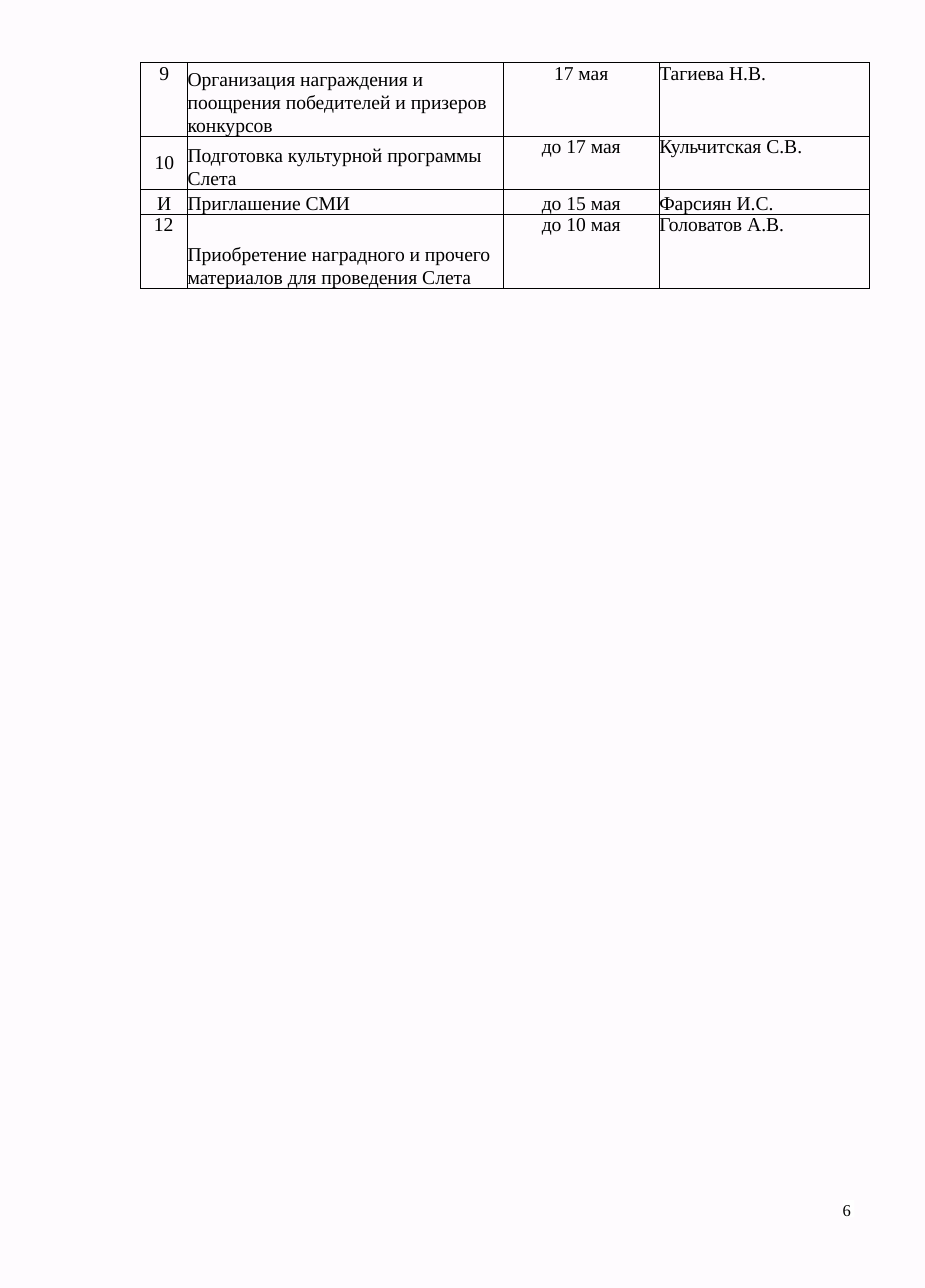
from pptx import Presentation
from pptx.dml.color import RGBColor
from pptx.enum.text import MSO_ANCHOR as Anchor, PP_ALIGN as Align
from pptx.oxml import parse_xml
from pptx.oxml.ns import nsdecls
from pptx.util import Inches, Pt

COLORS = {"page": "FEFBFE", "number": "FFFFFF", "ink": "000000"}
COLUMN_WIDTHS = [0.43, 2.91, 1.44, 1.94]
ROW_HEIGHTS = [0.68, 0.49, 0.23, 0.68]
TASKS = [
    ["9", "Организация награждения и поощрения победителей и призеров конкурсов", "17 мая", "Тагиева Н.В."],
    ["10", "Подготовка культурной программы Слета", "до 17 мая", "Кульчитская С.В."],
    ["И", "Приглашение СМИ", "до 15 мая", "Фарсиян И.С."],
    ["12", "Приобретение наградного и прочего материалов для проведения Слета", "до 10 мая", "Головатов А.В."],
]
COLUMN_ALIGNS = [Align.CENTER, Align.LEFT, Align.CENTER, Align.LEFT]
TOP, MIDDLE, BOTTOM = Anchor.TOP, Anchor.MIDDLE, Anchor.BOTTOM
ROW_ANCHORS = [
    [TOP, BOTTOM, TOP, TOP],
    [MIDDLE, BOTTOM, TOP, TOP],
    [BOTTOM] * 4,
    [TOP, BOTTOM, TOP, TOP],
]
TASK_SPACING = [1.07, 1.08, 1.0, 1.06]
NO_MARGINS = dict.fromkeys(["margin_left", "margin_top", "margin_right", "margin_bottom"], 0)


def apply(target, values):
    for name, value in values.items():
        setattr(target, name, value)


class Page:
    font = "Times New Roman"
    border = Pt(0.75)

    def __init__(self, deck):
        self.slide = deck.slides.add_slide(deck.slide_layouts[6])
        self.paint(self.slide.background.fill, "page")

    def paint(self, fill, color):
        fill.solid()
        fill.fore_color.rgb = RGBColor.from_string(COLORS[color])

    def add_text(self, para, text, size, **layout):
        apply(para, layout)
        span = para.add_run()
        span.text = text
        apply(span.font, {"name": self.font, "size": Pt(size)})
        span.font.color.rgb = RGBColor.from_string(COLORS["ink"])

    def outline(self, cell):
        properties = cell._tc.get_or_add_tcPr()
        for index, side in enumerate("LRTB"):
            properties.insert(index, parse_xml(
                f'<a:ln{side} {nsdecls("a")} w="{self.border}"><a:solidFill>'
                f'<a:srgbClr val="{COLORS["ink"]}"/></a:solidFill></a:ln{side}>'))

    def table(self, left, top, widths, heights):
        frame = self.slide.shapes.add_table(
            len(heights), len(widths), Inches(left), Inches(top),
            Inches(sum(widths)), Inches(sum(heights)))
        table = frame.table
        apply(table, {"first_row": False, "horz_banding": False})
        for column, width in zip(table.columns, widths):
            column.width = Inches(width)
        for row, height in zip(table.rows, heights):
            row.height = Inches(height)
        return table

    def cell(self, cell, text, anchor, **layout):
        apply(cell, {**NO_MARGINS, "vertical_anchor": anchor})
        cell.fill.background()
        self.outline(cell)
        para = cell.text_frame.paragraphs[0]
        self.add_text(para, text, 13, **layout)
        return para

    def number(self, text, left, top, width, height):
        box = self.slide.shapes.add_textbox(*map(Inches, (left, top, width, height)))
        self.paint(box.fill, "number")
        apply(box.text_frame, {**NO_MARGINS, "word_wrap": False})
        self.add_text(box.text_frame.paragraphs[0], text, 11)


def main():
    deck = Presentation()
    apply(deck, {"slide_width": Inches(8.53), "slide_height": Inches(11.88)})
    page = Page(deck)
    table = page.table(1.3, 0.58, COLUMN_WIDTHS, ROW_HEIGHTS)
    for row, texts in enumerate(TASKS):
        for column, text in enumerate(texts):
            layout = {"alignment": COLUMN_ALIGNS[column]}
            if column == 1:
                layout["line_spacing"] = TASK_SPACING[row]
            if text == "12":
                layout["alignment"] = Align.LEFT
            para = page.cell(table.cell(row, column), text, ROW_ANCHORS[row][column], **layout)
            if text == "12":
                para._p.get_or_add_pPr().set("indent", str(Inches(0.12)))
    page.number("6", 7.77, 11.07, 0.11, 0.16)
    deck.save("out.pptx")


if __name__ == "__main__":
    main()
